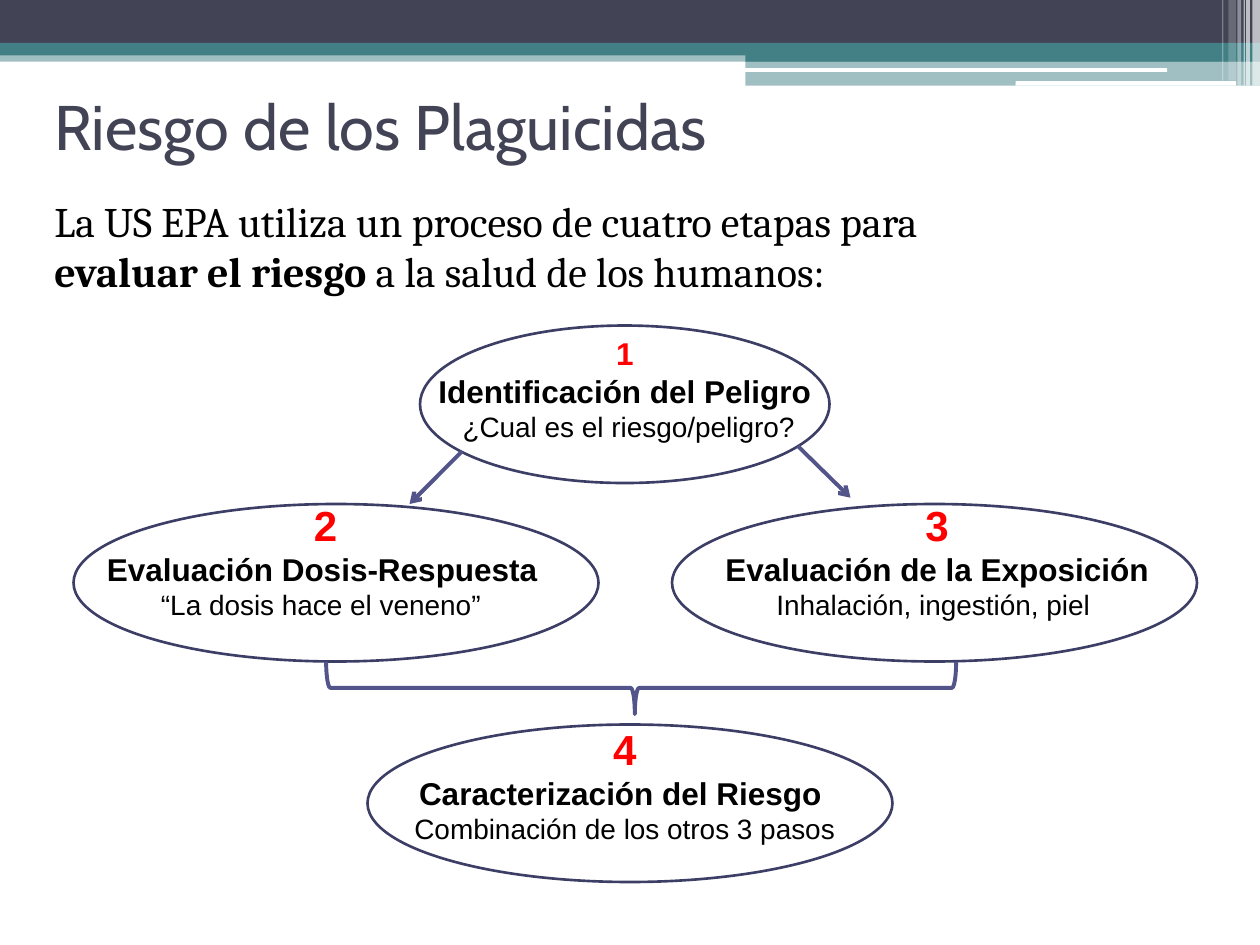
from lxml.etree import SubElement
from pptx import Presentation
from pptx.dml.color import RGBColor
from pptx.enum.shapes import MSO_CONNECTOR, MSO_SHAPE
from pptx.enum.text import MSO_ANCHOR, PP_ALIGN
from pptx.oxml.ns import qn
from pptx.util import Inches, Pt

# Content
TITLE = "Riesgo de los Plaguicidas"
INTRO = [("La US EPA utiliza un proceso de cuatro etapas para ", False),
         ("\v", False),
         ("evaluar el riesgo ", True),
         ("a la salud de los humanos:", False)]
CENTER, LEFT = PP_ALIGN.CENTER, PP_ALIGN.LEFT

# Boxes are (column, row, columns, rows) on a grid of 120 by 90 cells.
# Each line of a step: text, alignment, left margin in columns.
STEPS = [
    {"oval": (40, 31, 39, 15), "caption": (40, 31.2, 39, 11.76), "number_size": 18,
     "lines": [("1", CENTER, 0), ("Identificación del Peligro", CENTER, 0),
               (" ¿Cual es el riesgo/peligro?", CENTER, 0)]},
    {"oval": (7, 48, 50, 15), "caption": (9, 47, 44, 13), "number_size": 24,
     "lines": [("2", CENTER, 0), ("Evaluación Dosis-Respuesta", LEFT, 0),
               ("“La dosis hace el veneno”", LEFT, 5.15)]},
    {"oval": (64, 48, 50, 15), "caption": (63, 47, 51, 13), "number_size": 24,
     "lines": [("3", CENTER, 1.5), ("Evaluación de la Exposición", CENTER, 1.5),
               ("Inhalación, ingestión, piel ", CENTER, 1.5)]},
    {"oval": (35, 69, 50, 15), "caption": (38, 68.28, 43, 16.56), "number_size": 24,
     "lines": [("4", CENTER, 0), ("Caracterización del Riesgo ", CENTER, 0),
               ("Combinación de los otros 3 pasos ", CENTER, 0)]},
]
ARROWS = [((76, 42.5), (81, 47.4)), ((44, 43), (39, 48))]
TITLE_BOX = (4, 4.92, 110, 14.04)
INTRO_BOX = (4, 18, 110, 15.72)
BRACE_BOX = (58.56, 35.52, 5, 60)

THEME = {"navy": "424456", "teal": "438086", "white": "FFFFFF", "black": "000000",
         "number": "FF0000", "oval_line": "3D3E66", "accent": "53548A",
         "title_font": "Cabin", "intro_font": "Cambria", "step_font": "Arial",
         "title": 36, "intro": 24, "heading": 18, "detail": 16,
         "thin": 1.5, "thick": 2.25}

# Header bands: box, colour, opacity in percent
BANDS = [((0, 4.8, 120, 1.08), "teal", 50),
         ((0, 0, 120, 4.08), "navy", 100),
         ((0, 4.08, 120, 1.2), "teal", 100),
         ((71, 4.68, 49, 1.2), "teal", 100),
         ((71, 5.8, 49, 2.36), "teal", 50)]
ROUNDED_BARS = [(70.95, 6.5, 40.2, 0.36), (96.72, 7.72, 21, 0.44)]
# Pale stripes at the corner: column, width, height, opacity
STRIPES = [(119.28, 0.72, 8.16, 65), (118.68, 0.36, 8.16, 65),
           (118.44, 0.12, 8.16, 60), (117.84, 0.36, 8.16, 40),
           (117, 0.72, 7.68, 20), (116.4, 0.12, 7.68, 30)]

prs = Presentation()
prs.slide_width, prs.slide_height = Inches(10), Inches(7.5)
slide = prs.slides.add_slide(prs.slide_layouts[6])
CELL = prs.slide_width / 120


def cells(values):
    return [round(value * CELL) for value in values]


def color(name):
    return RGBColor.from_string(THEME[name])


def add_figure(preset, box, fill=None, opacity=100, line=None, width=None):
    figure = slide.shapes.add_shape(preset, *cells(box))
    figure.shadow.inherit = False
    if fill:
        figure.fill.solid()
        figure.fill.fore_color.rgb = color(fill)
        if opacity < 100:
            rgb = figure.fill._xPr.find(".//" + qn("a:srgbClr"))
            SubElement(rgb, qn("a:alpha"), val=str(opacity * 1000))
    else:
        figure.fill.background()
    if line:
        figure.line.color.rgb = color(line)
        figure.line.width = Pt(THEME[width])
    else:
        figure.line.fill.background()
    return figure


def add_frame(box, anchor=MSO_ANCHOR.TOP):
    frame = slide.shapes.add_textbox(*cells(box)).text_frame
    frame.word_wrap = True
    frame.vertical_anchor = anchor
    return frame


def style(font, face, size, fill, bold=False):
    font.name, font.size, font.bold = face, Pt(size), bold
    font.color.rgb = color(fill)


# Header
for box, fill, opacity in BANDS:
    add_figure(MSO_SHAPE.RECTANGLE, box, fill, opacity)
for box in ROUNDED_BARS:
    add_figure(MSO_SHAPE.ROUNDED_RECTANGLE, box, "white")
for column, width, height, opacity in STRIPES:
    add_figure(MSO_SHAPE.RECTANGLE, (column, 0, width, height), "white", opacity)

# Ovals, last step at the back
for step in reversed(STEPS):
    add_figure(MSO_SHAPE.OVAL, step["oval"], "white", line="oval_line", width="thin")

# Title and introduction
heading = add_frame(TITLE_BOX, MSO_ANCHOR.MIDDLE)
heading.text = TITLE
style(heading.paragraphs[0].runs[0].font, THEME["title_font"], THEME["title"], "navy")

intro = add_frame(INTRO_BOX).paragraphs[0]
for text, bold in INTRO:
    if text == "\v":
        intro.add_line_break()
        continue
    part = intro.add_run()
    part.text = text
    style(part.font, THEME["intro_font"], THEME["intro"], "black", bold)

# Brace joining steps 2 and 3
brace = add_figure(MSO_SHAPE.RIGHT_BRACE, BRACE_BOX, line="accent", width="thick")
brace.rotation = 90
brace.adjustments[0], brace.adjustments[1] = 0.08, 0.51

# Arrows from step 1
for start, end in ARROWS:
    arrow = slide.shapes.add_connector(MSO_CONNECTOR.STRAIGHT, *cells(start + end))
    arrow.line.color.rgb = color("accent")
    arrow.line.width = Pt(THEME["thick"])
    SubElement(arrow.line._get_or_add_ln(), qn("a:tailEnd"), type="arrow")
    SubElement(arrow._element.spPr, qn("a:effectLst"))

# Step captions
for step in STEPS:
    caption = add_frame(step["caption"])
    caption.text = "\n".join(text for text, _, _ in step["lines"])
    looks = [(step["number_size"], "number", True),
             (THEME["heading"], "black", True),
             (THEME["detail"], "black", False)]
    for paragraph, (_, align, margin), look in zip(caption.paragraphs, step["lines"], looks):
        paragraph.alignment = align
        if margin:
            paragraph._p.get_or_add_pPr().set("marL", str(round(margin * CELL)))
        style(paragraph.runs[0].font, THEME["step_font"], *look)

prs.save("out.pptx")
